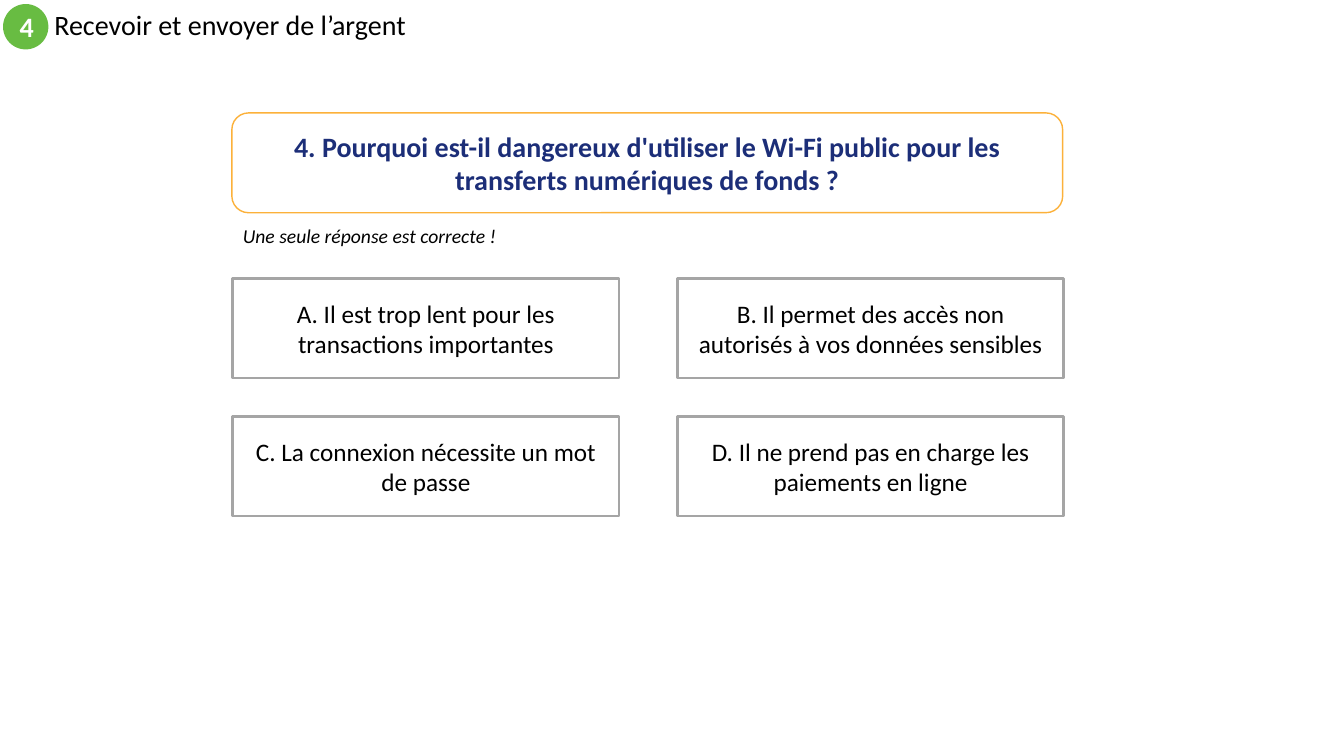
from dataclasses import dataclass
from typing import Optional

from pptx import Presentation
from pptx.dml.color import RGBColor
from pptx.enum.shapes import MSO_SHAPE
from pptx.enum.text import MSO_ANCHOR, PP_ALIGN
from pptx.shapes.autoshape import Shape
from pptx.slide import Slide
from pptx.util import Inches, Pt

COLORS = {
    "white": "FFFFFF",
    "black": "000000",
    "green": "68BC42",
    "orange": "FCB13A",
    "navy": "1C2E78",
    "grey": "A5A5A5",
}
FONT = "Calibri"

ANSWERS = [
    "A. Il est trop lent pour les transactions importantes",
    "B. Il permet des accès non autorisés à vos données sensibles",
    "C. La connexion nécessite un mot de passe",
    "D. Il ne prend pas en charge les paiements en ligne",
]
ANSWER_LEFT, ANSWER_TOP = 2.31, 2.76
ANSWER_WIDTH, ANSWER_HEIGHT = 3.83, 0.99
COLUMN_STEP, ROW_STEP = 4.41, 1.37


@dataclass(frozen=True)
class Box:
    left: float
    top: float
    width: float
    height: float

    def lengths(self) -> tuple:
        return tuple(Inches(v) for v in (self.left, self.top, self.width, self.height))


def rgb(color: str) -> RGBColor:
    return RGBColor.from_string(COLORS[color])


def write(
    shape: Shape,
    text: str,
    *,
    size: float,
    color: str = "black",
    bold: bool = False,
    italic: bool = False,
    align: PP_ALIGN = PP_ALIGN.CENTER,
    anchor: MSO_ANCHOR = MSO_ANCHOR.MIDDLE,
    line_spacing: Optional[float] = None,
) -> None:
    frame = shape.text_frame
    frame.word_wrap = True
    frame.vertical_anchor = anchor
    paragraph = frame.paragraphs[0]
    paragraph.alignment = align
    paragraph.line_spacing = line_spacing
    run = paragraph.add_run()
    run.text = text
    run.font.name = FONT
    run.font.size = Pt(size)
    run.font.bold = bold
    run.font.italic = italic
    run.font.color.rgb = rgb(color)


def add_panel(
    slide: Slide,
    kind: MSO_SHAPE,
    box: Box,
    fill: str = "white",
    line: Optional[str] = None,
    line_width: float = 1,
) -> Shape:
    panel = slide.shapes.add_shape(kind, *box.lengths())
    panel.shadow.inherit = False
    panel.fill.solid()
    panel.fill.fore_color.rgb = rgb(fill)
    if line is None:
        panel.line.fill.background()
    else:
        panel.line.color.rgb = rgb(line)
        panel.line.width = Pt(line_width)
    return panel


def add_header(slide: Slide) -> None:
    badge = add_panel(slide, MSO_SHAPE.OVAL, Box(0.03, 0.04, 0.45, 0.45), "green")
    write(badge, "4", size=20, color="white", bold=True)
    title = slide.shapes.add_textbox(*Box(0.44, 0.04, 8, 0.45).lengths())
    write(title, "Recevoir et envoyer de l’argent", size=20,
          align=PP_ALIGN.LEFT, line_spacing=0.9)


def add_question(slide: Slide) -> None:
    question = add_panel(slide, MSO_SHAPE.ROUNDED_RECTANGLE,
                         Box(2.3, 1.12, 8.24, 0.99), line="orange")
    write(question,
          "4. Pourquoi est-il dangereux d'utiliser le Wi-Fi public pour les "
          "transferts numériques de fonds ?",
          size=20, color="navy", bold=True)
    instruction = slide.shapes.add_textbox(*Box(2.31, 2.17, 3.18, 0.34).lengths())
    write(instruction, "Une seule réponse est correcte !", size=14, italic=True,
          align=PP_ALIGN.LEFT, anchor=MSO_ANCHOR.TOP)


def add_answers(slide: Slide) -> None:
    """Lay the answers out in two columns, row by row."""
    for index, answer in enumerate(ANSWERS):
        row, column = divmod(index, 2)
        box = Box(ANSWER_LEFT + column * COLUMN_STEP, ANSWER_TOP + row * ROW_STEP,
                  ANSWER_WIDTH, ANSWER_HEIGHT)
        panel = add_panel(slide, MSO_SHAPE.RECTANGLE, box, line="grey", line_width=2)
        write(panel, answer, size=18)


def main() -> None:
    presentation = Presentation()
    presentation.slide_width = Inches(13.33)
    presentation.slide_height = Inches(7.5)
    slide = presentation.slides.add_slide(presentation.slide_layouts[6])
    add_header(slide)
    add_question(slide)
    add_answers(slide)
    presentation.save("out.pptx")


if __name__ == "__main__":
    main()
